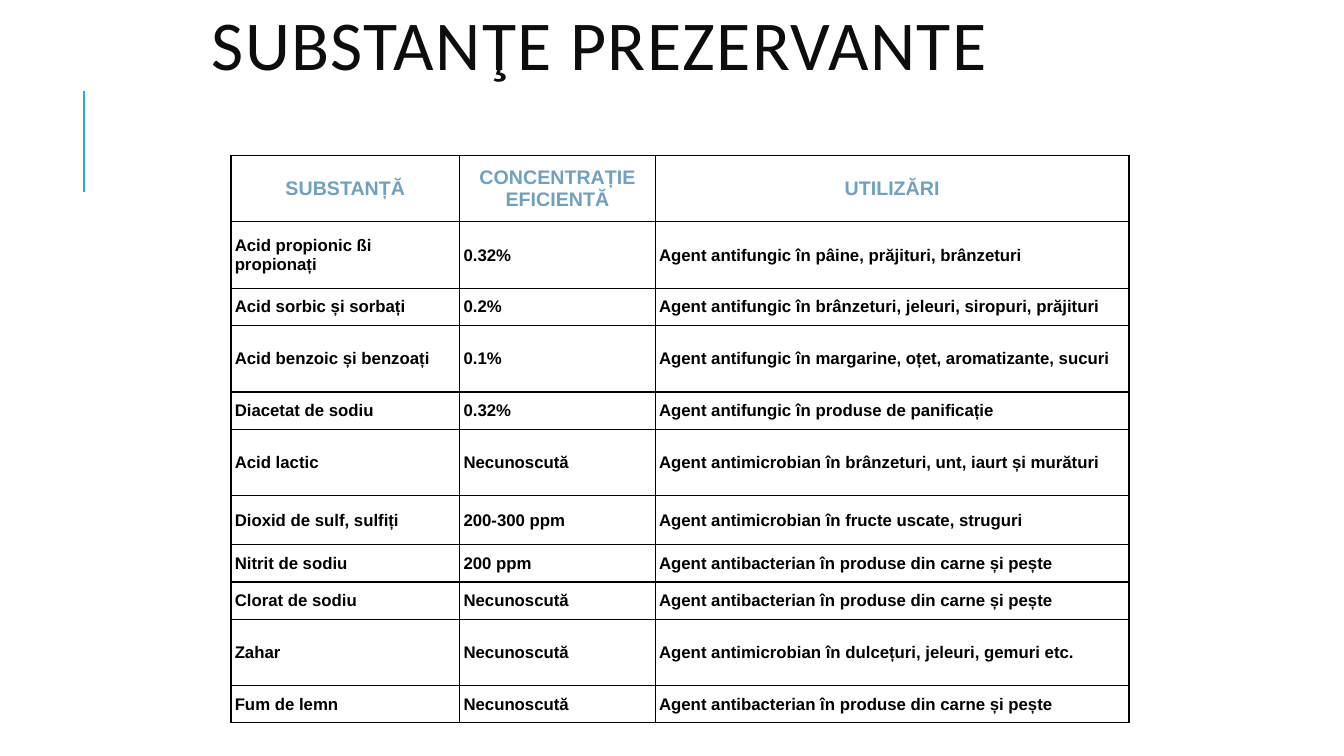
from dataclasses import dataclass

from lxml.etree import SubElement
from pptx import Presentation
from pptx.dml.color import RGBColor
from pptx.enum.shapes import MSO_CONNECTOR as Connector
from pptx.enum.text import MSO_ANCHOR as Anchor, PP_ALIGN as Align
from pptx.oxml.ns import qn
from pptx.slide import Slide
from pptx.table import _Cell as Cell
from pptx.text.text import _Paragraph as Paragraph
from pptx.util import Pt


@dataclass(frozen=True)
class TextStyle:
    font: str
    size: float
    color: str
    bold: bool = False
    align: Align = Align.LEFT


@dataclass(frozen=True)
class Theme:
    accent: str = "1CADE4"
    border: str = "000000"
    title: TextStyle = TextStyle("Calibri", 50, "0D0D0D")
    header: TextStyle = TextStyle("Arial", 14, "70A1C0", True, Align.CENTER)
    body: TextStyle = TextStyle("Arial", 12, "000000", True)


@dataclass(frozen=True)
class Preservative:
    substance: str
    concentration: str
    uses: str
    height: float


THEME = Theme()
TALL, MEDIUM, SHORT = 47.5, 35, 26.6
COLUMN_WIDTHS = (163.4, 139.7, 338.4)
UNKNOWN = "Necunoscută"
MEAT_AND_FISH = "Agent antibacterian în produse din carne și pește"

HEADER = Preservative("SUBSTANȚĂ", "CONCENTRAȚIE EFICIENTĂ", "UTILIZĂRI", TALL)
PRESERVATIVES = (
    Preservative("Acid propionic ßi propionați", "0.32%",
                 "Agent antifungic în pâine, prăjituri, brânzeturi", TALL),
    Preservative("Acid sorbic și sorbați", "0.2%",
                 "Agent antifungic în brânzeturi, jeleuri, siropuri, prăjituri", SHORT),
    Preservative("Acid benzoic și benzoați", "0.1%",
                 "Agent antifungic în margarine, oțet, aromatizante, sucuri", TALL),
    Preservative("Diacetat de sodiu", "0.32%",
                 "Agent antifungic în produse de panificație", SHORT),
    Preservative("Acid lactic", UNKNOWN,
                 "Agent antimicrobian în brânzeturi, unt, iaurt și murături", TALL),
    Preservative("Dioxid de sulf, sulfiți", "200-300 ppm",
                 "Agent antimicrobian în fructe uscate, struguri", MEDIUM),
    Preservative("Nitrit de sodiu", "200 ppm", MEAT_AND_FISH, SHORT),
    Preservative("Clorat de sodiu", UNKNOWN, MEAT_AND_FISH, SHORT),
    Preservative("Zahar", UNKNOWN,
                 "Agent antimicrobian în dulcețuri, jeleuri, gemuri etc.", TALL),
    Preservative("Fum de lemn", UNKNOWN, MEAT_AND_FISH, SHORT),
)


def write(paragraph: Paragraph, text: str, style: TextStyle, spacing: float = 0) -> None:
    paragraph.alignment = style.align
    run = paragraph.add_run()
    run.text = text
    run.font.name = style.font
    run.font.size = Pt(style.size)
    run.font.bold = style.bold
    run.font.color.rgb = RGBColor.from_string(style.color)
    if spacing:
        run.font._element.set("spc", str(round(spacing * 100)))


def add_accent_line(slide: Slide) -> None:
    line = slide.shapes.add_connector(Connector.STRAIGHT, Pt(60), Pt(137), Pt(60), Pt(65))
    line.line.color.rgb = RGBColor.from_string(THEME.accent)
    line.line.width = Pt(1.5)
    SubElement(line._element.spPr, qn("a:effectLst"))


def add_title(slide: Slide) -> None:
    box = slide.shapes.add_textbox(Pt(144), Pt(6), Pt(684), Pt(60))
    frame = box.text_frame
    frame.word_wrap = True
    frame.vertical_anchor = Anchor.MIDDLE
    paragraph = frame.paragraphs[0]
    paragraph.line_spacing = 0.8
    write(paragraph, "SUBSTANŢE PREZERVANTE", THEME.title, spacing=1)


def add_borders(cell: Cell) -> None:
    properties = cell._tc.get_or_add_tcPr()
    for position, side in enumerate(("a:lnL", "a:lnR", "a:lnT", "a:lnB")):
        border = properties.makeelement(qn(side), {"w": str(Pt(1))})
        properties.insert(position, border)
        fill = SubElement(border, qn("a:solidFill"))
        SubElement(fill, qn("a:srgbClr"), val=THEME.border)


def fill_cell(cell: Cell, text: str, style: TextStyle) -> None:
    cell.fill.background()
    cell.vertical_anchor = Anchor.MIDDLE
    cell.margin_left = cell.margin_right = Pt(2.7)
    cell.margin_top = cell.margin_bottom = Pt(1.4)
    write(cell.text_frame.paragraphs[0], text, style)
    add_borders(cell)


def add_preservative_table(slide: Slide) -> None:
    entries = (HEADER, *PRESERVATIVES)
    height = sum(entry.height for entry in entries)
    table = slide.shapes.add_table(
        len(entries), len(COLUMN_WIDTHS),
        Pt(165), Pt(111), Pt(sum(COLUMN_WIDTHS)), Pt(height),
    ).table
    table.horz_banding = False
    for column, width in zip(table.columns, COLUMN_WIDTHS):
        column.width = Pt(width)
    for row, entry in zip(table.rows, entries):
        row.height = Pt(entry.height)
        style = THEME.header if entry is HEADER else THEME.body
        texts = (entry.substance, entry.concentration, entry.uses)
        for cell, text in zip(row.cells, texts):
            fill_cell(cell, text, style)


def main() -> None:
    presentation = Presentation()
    presentation.slide_width, presentation.slide_height = Pt(960), Pt(540)
    slide = presentation.slides.add_slide(presentation.slide_layouts[6])
    add_accent_line(slide)
    add_title(slide)
    add_preservative_table(slide)
    presentation.save("out.pptx")


if __name__ == "__main__":
    main()
